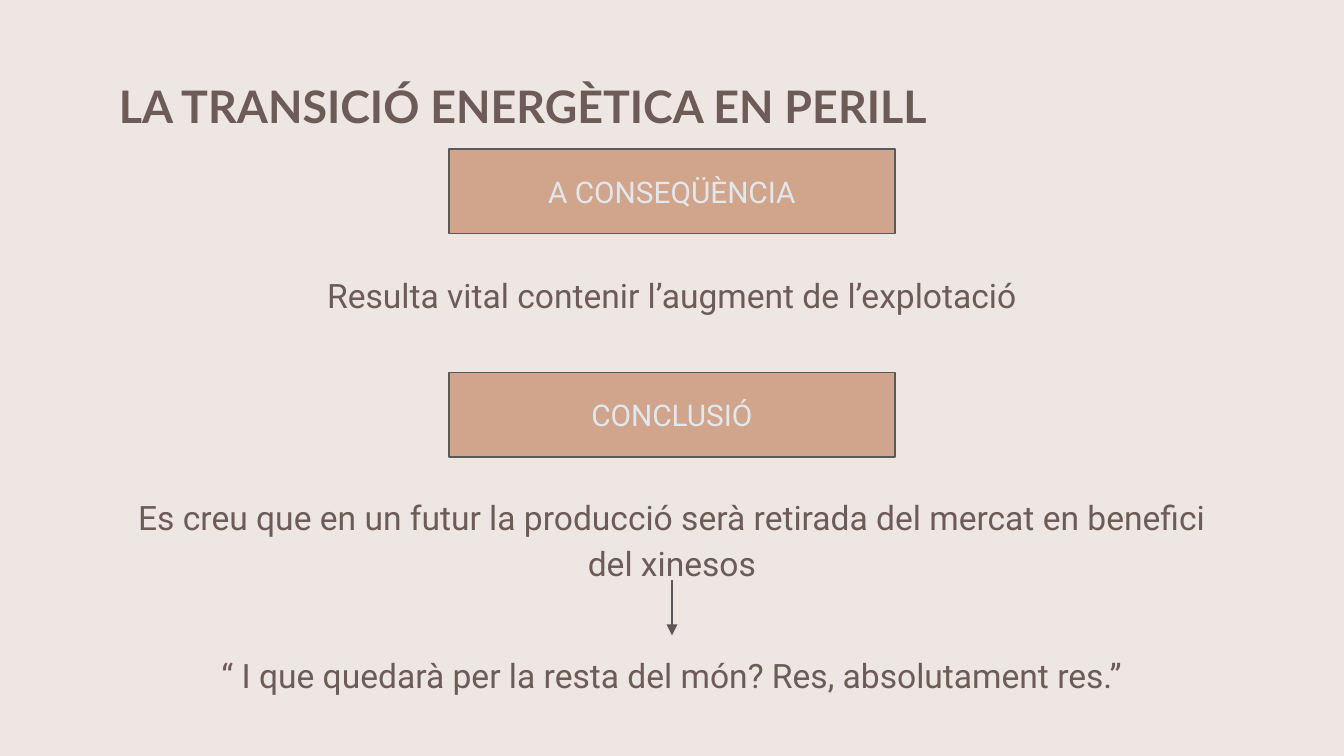
from lxml import etree
from pptx import Presentation
from pptx.dml.color import RGBColor
from pptx.enum.shapes import MSO_CONNECTOR, MSO_SHAPE
from pptx.enum.text import MSO_ANCHOR, MSO_AUTO_SIZE, PP_ALIGN
from pptx.oxml.ns import qn
from pptx.util import Cm, Pt

LEFT, CENTER = PP_ALIGN.LEFT, PP_ALIGN.CENTER
TOP, MIDDLE = MSO_ANCHOR.TOP, MSO_ANCHOR.MIDDLE
NO_AUTOFIT = MSO_AUTO_SIZE.NONE
RECTANGLE = MSO_SHAPE.RECTANGLE
STRAIGHT = MSO_CONNECTOR.STRAIGHT

TITLE = "LA TRANSICIÓ ENERGÈTICA EN PERILL"
HEADINGS = [("A CONSEQÜÈNCIA", 2.82), ("CONCLUSIÓ", 7.04)]
STATEMENTS = [
    ("Resulta vital contenir l’augment de l’explotació", 4.83, 14.4),
    ("Es creu que en un futur la producció serà retirada del mercat en benefici del xinesos", 9.02, 21.41),
    ("“ I que quedarà per la resta del món? Res, absolutament res.”", 12.01, 21.41),
]

THEME = {
    "background": RGBColor.from_string("EEE6E2"),
    "text": RGBColor.from_string("6D5B57"),
    "heading_fill": RGBColor.from_string("D1A48C"),
    "heading_text": RGBColor.from_string("E1E7EC"),
    "line": RGBColor.from_string("595959"),
    "title_font": "Lato",
    "body_font": "Roboto",
    "title_size": Pt(24),
    "heading_size": Pt(16),
    "body_size": Pt(18),
    "line_width": Pt(0.75),
}

PAGE_WIDTH, PAGE_HEIGHT = 25.4, 14.29
ROW_HEIGHT = 1.6
TITLE_TOP, TITLE_WIDTH = 1.24, 21.41
HEADING_WIDTH = 8.43
ARROW_TOP, ARROW_BOTTOM = 10.97, 12.01
INSET = Cm(0.25)


def place(shape, top, width):
    shape.left, shape.top = Cm((PAGE_WIDTH - width) / 2), Cm(top)
    shape.width, shape.height = Cm(width), Cm(ROW_HEIGHT)


def write(shape, text, font, size, color, align=CENTER, anchor=TOP, bold=False, spacing=1.0):
    frame = shape.text_frame
    frame.text = text
    frame.word_wrap = True
    frame.auto_size = NO_AUTOFIT
    frame.vertical_anchor = anchor
    frame.margin_left = frame.margin_right = INSET
    frame.margin_top = frame.margin_bottom = INSET
    paragraph = frame.paragraphs[0]
    paragraph.alignment = align
    paragraph.line_spacing = spacing
    paragraph.space_before = Pt(0)
    properties = paragraph._p.get_or_add_pPr()
    properties.set("marL", "0")
    properties.set("indent", "0")
    etree.SubElement(properties, qn("a:buNone"))
    run_font = paragraph.runs[0].font
    run_font.name, run_font.size, run_font.bold = font, size, bold
    run_font.color.rgb = color


def style_line(line):
    line.color.rgb = THEME["line"]
    line.width = THEME["line_width"]


def add_heading(slide, text, top):
    heading = slide.shapes.add_shape(RECTANGLE, 0, 0, 0, 0)
    place(heading, top, HEADING_WIDTH)
    heading.shadow.inherit = False
    heading.fill.solid()
    heading.fill.fore_color.rgb = THEME["heading_fill"]
    style_line(heading.line)
    write(heading, text, THEME["body_font"], THEME["heading_size"], THEME["heading_text"], anchor=MIDDLE)


def add_arrow(slide):
    middle = Cm(PAGE_WIDTH / 2)
    arrow = slide.shapes.add_connector(STRAIGHT, middle, Cm(ARROW_TOP), middle, Cm(ARROW_BOTTOM))
    style_line(arrow.line)
    etree.SubElement(arrow.line._get_or_add_ln(), qn("a:tailEnd"), type="triangle")
    etree.SubElement(arrow._element.spPr, qn("a:effectLst"))


def main():
    deck = Presentation()
    deck.slide_width, deck.slide_height = Cm(PAGE_WIDTH), Cm(PAGE_HEIGHT)
    slide = deck.slides.add_slide(deck.slide_layouts.get_by_name("Comparison"))
    slide.background.fill.solid()
    slide.background.fill.fore_color.rgb = THEME["background"]

    title, *bodies = slide.placeholders
    place(title, TITLE_TOP, TITLE_WIDTH)
    write(title, TITLE, THEME["title_font"], THEME["title_size"], THEME["text"], align=LEFT, bold=True)

    for body, (statement, top, width) in zip(bodies, STATEMENTS):
        place(body, top, width)
        write(body, statement, THEME["body_font"], THEME["body_size"], THEME["text"], spacing=1.15)
    for unused in bodies[len(STATEMENTS):]:
        unused._element.getparent().remove(unused._element)

    for text, top in HEADINGS:
        add_heading(slide, text, top)
    add_arrow(slide)
    deck.save("out.pptx")


if __name__ == "__main__":
    main()
